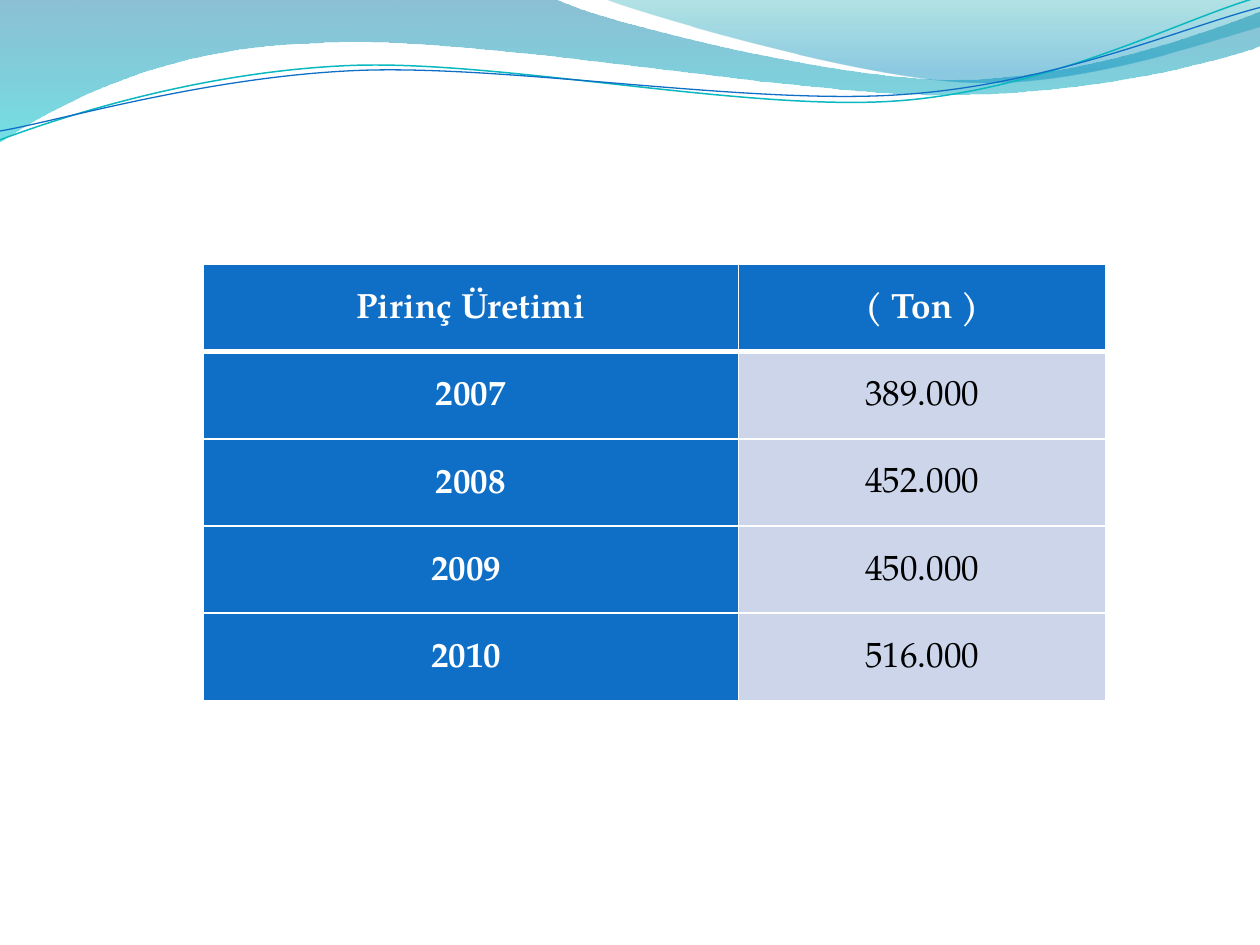
from dataclasses import dataclass
from math import cos, radians, sin

from lxml.etree import SubElement
from pptx import Presentation
from pptx.dml.color import RGBColor
from pptx.enum.text import MSO_ANCHOR, PP_ALIGN
from pptx.oxml import parse_xml
from pptx.oxml.ns import nsdecls, qn
from pptx.util import Inches, Pt

Point = tuple[float, float]


@dataclass(frozen=True)
class Theme:
    font: str = "TeX Gyre Pagella"
    text_size: int = 20
    blue: str = "0F6FC6"
    teal: str = "0AB8BF"
    pale: str = "CCD5EA"
    white: str = "FFFFFF"
    black: str = "000000"


@dataclass(frozen=True)
class Stop:
    position: float
    color: str
    opacity: int


@dataclass(frozen=True)
class Wave:
    """Outline in inches: a segment of one point is straight, of three a cubic curve."""
    start: Point
    segments: list[list[Point]]
    stops: tuple[Stop, ...] = ()
    line_color: str = ""
    line_width: float = 0
    tilt: float = 0
    center: Point = (0, 0)


THEME = Theme()
LINE_TILT = -2.7
ROW_HEIGHT = 3.46 / 5
COLUMN_WIDTHS = [4.25, 2.92]
ROWS = [
    ("Pirinç Üretimi", "( Ton )"),
    ("2007", "389.000"),
    ("2008", "452.000"),
    ("2009 ", "450.000"),
    ("2010 ", "516.000"),
]
WAVES = [
    Wave((0, 0), [
        [(4.4, -0.01)],
        [(4.76, 0.17), (6.64, 0.63), (7.58, 0.63)],
        [(8.53, 0.63), (9.58, 0.26), (10, 0.09)],
        [(10.01, 0.36)],
        [(9.83, 0.44), (8.7, 0.76), (7.46, 0.75)],
        [(6.22, 0.75), (3.82, 0.28), (2.57, 0.34)],
        [(1.29, 0.36), (0.46, 0.83), (-0.01, 1.13)],
        [(0, 0)],
    ], stops=(Stop(0, "0074A1", 45), Stop(1, "00C6CF", 55))),
    Wave((4.79, -0.01), [
        [(5.09, 0.11), (6.82, 0.62), (7.69, 0.65)],
        [(8.56, 0.69), (9.61, 0.32), (10, 0.21)],
        [(10, 0)],
        [(4.79, -0.01)],
    ], stops=(Stop(0, "00A1A9", 30), Stop(0.8, "008BBF", 45))),
    Wave((0, 1.11), [
        [(0.48, 0.93), (1.58, 0.57), (2.77, 0.52)],
        [(3.95, 0.47), (5.93, 0.89), (7.13, 0.8)],
        [(8.33, 0.71), (9.38, 0.15), (9.98, -0.02)],
    ], line_color=THEME.teal, line_width=0.85, tilt=LINE_TILT, center=(4.99, 0.58)),
    Wave((0, 1.04), [
        [(0.47, 0.96), (1.64, 0.61), (2.83, 0.56)],
        [(4.03, 0.51), (5.97, 0.84), (7.17, 0.75)],
        [(8.36, 0.67), (9.41, 0.21), (10, 0.06)],
    ], line_color=THEME.blue, line_width=0.75, tilt=LINE_TILT, center=(5, 0.59)),
]


def rgb(color: str) -> RGBColor:
    return RGBColor.from_string(color)


def level_point(point: Point, wave: Wave) -> Point:
    """Undo the wave's tilt, which the rotation of its shape brings back."""
    angle = radians(-wave.tilt)
    across, down = point[0] - wave.center[0], point[1] - wave.center[1]
    return (Inches(wave.center[0] + across * cos(angle) - down * sin(angle)),
            Inches(wave.center[1] + across * sin(angle) + down * cos(angle)))


def bend_segments(shape, segments: list[list[Point]]) -> None:
    """Join the three straight steps of each curved segment into one cubic curve."""
    steps = iter(list(shape._element.iter(qn("a:lnTo"))))
    for segment in segments:
        first, *others = [next(steps) for _ in segment]
        if others:
            curve = parse_xml(f'<a:cubicBezTo {nsdecls("a")}/>')
            first.addprevious(curve)
            for step in (first, *others):
                curve.append(step[0])
                step.getparent().remove(step)


def fill_gradient(shape, stops: tuple[Stop, ...]) -> None:
    """Fill from top to bottom with partly transparent colours."""
    shape.fill.gradient()
    shape.fill.gradient_angle = 270
    for gradient_stop, stop in zip(shape.fill.gradient_stops, stops):
        gradient_stop.position = stop.position
        gradient_stop.color.rgb = rgb(stop.color)
    for color, stop in zip(shape._element.spPr.iter(qn("a:srgbClr")), stops):
        SubElement(color, qn("a:alpha")).set("val", str(stop.opacity * 1000))


def add_wave(slide, wave: Wave) -> None:
    start = level_point(wave.start, wave)
    points = [level_point(point, wave) for segment in wave.segments for point in segment]
    builder = slide.shapes.build_freeform(*start, scale=1.0)
    builder.add_line_segments(points, close=bool(wave.stops))
    shape = builder.convert_to_shape()
    bend_segments(shape, wave.segments)
    shape.rotation = wave.tilt
    shape.shadow.inherit = False
    if wave.stops:
        fill_gradient(shape, wave.stops)
        shape.line.fill.background()
    else:
        shape.fill.background()
        shape.line.color.rgb = rgb(wave.line_color)
        shape.line.width = Pt(wave.line_width)


def set_borders(cell, top: float, bottom: float) -> None:
    properties = cell._tc.get_or_add_tcPr()
    widths = {"lnL": 1, "lnR": 1, "lnT": top, "lnB": bottom}
    for index, (side, width) in enumerate(widths.items()):
        properties.insert(index, parse_xml(
            f'<a:{side} {nsdecls("a")} w="{Pt(width)}"><a:solidFill>'
            f'<a:srgbClr val="{THEME.white}"/></a:solidFill></a:{side}>'))


def format_cell(cell, text: str, strong: bool) -> None:
    cell.text = text
    cell.vertical_anchor = MSO_ANCHOR.MIDDLE
    cell.margin_left = cell.margin_right = Inches(0.07)
    cell.margin_top = cell.margin_bottom = 0
    cell.fill.solid()
    cell.fill.fore_color.rgb = rgb(THEME.blue if strong else THEME.pale)
    paragraph = cell.text_frame.paragraphs[0]
    paragraph.alignment = PP_ALIGN.CENTER
    paragraph.line_spacing = 1.15
    font = paragraph.font
    font.name = THEME.font
    font.size = Pt(THEME.text_size)
    font.bold = strong
    font.color.rgb = rgb(THEME.white if strong else THEME.black)


def add_production_table(slide) -> None:
    table = slide.shapes.add_table(
        len(ROWS), len(COLUMN_WIDTHS), Inches(1.61), Inches(2.1),
        Inches(sum(COLUMN_WIDTHS)), Inches(ROW_HEIGHT * len(ROWS))).table
    table.first_col = True
    table.horz_banding = False
    for column, width in zip(table.columns, COLUMN_WIDTHS):
        column.width = Inches(width)
    for row_index, texts in enumerate(ROWS):
        table.rows[row_index].height = Inches(ROW_HEIGHT)
        for column_index, text in enumerate(texts):
            cell = table.cell(row_index, column_index)
            format_cell(cell, text, strong=row_index == 0 or column_index == 0)
            set_borders(cell, top=3 if row_index == 1 else 1,
                        bottom=3 if row_index == 0 else 1)


def main() -> None:
    presentation = Presentation()
    presentation.slide_width = Inches(10)
    presentation.slide_height = Inches(7.5)
    slide = presentation.slides.add_slide(presentation.slide_layouts[6])
    for wave in WAVES:
        add_wave(slide, wave)
    add_production_table(slide)
    presentation.save("out.pptx")


if __name__ == "__main__":
    main()
